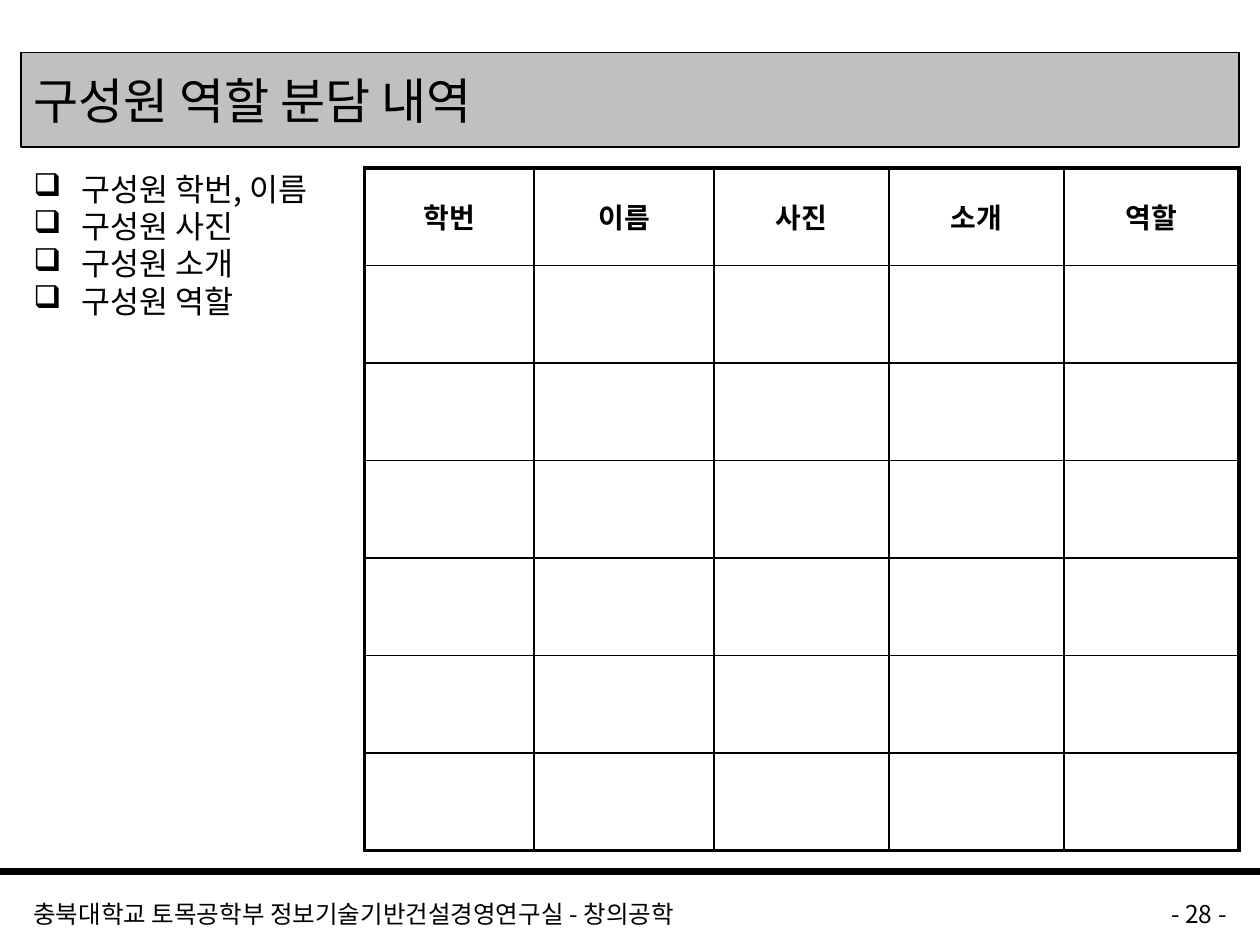
from lxml import etree
from pptx import Presentation
from pptx import util as u
from pptx.dml.color import RGBColor
from pptx.enum import shapes, text
from pptx.oxml.ns import qn

COLORS = {"ink": "000000", "band": "C0C0C0"}
FONT = "Noto Sans CJK KR"
WIDTH, HEIGHT = u.Inches(10), u.Inches(7.5)
COLUMN, ROW = WIDTH / 60, HEIGHT / 90
HEADINGS = ["학번", "이름", "사진", "소개", "역할"]
TOPICS = ["구성원 학번, 이름", "구성원 사진", "구성원 소개", "구성원 역할"]
COLUMN_WIDTHS = [1.35, 1.43, 1.39, 1.39, 1.39]
MEMBER_ROWS = 6
INNER, OUTER = 1, 2.25


def grid(left, top, columns, rows):
    return [round(v) for v in (left * COLUMN, top * ROW, columns * COLUMN, rows * ROW)]


def color(name):
    return RGBColor.from_string(COLORS[name])


def format_runs(frame, size, bold=False):
    for paragraph in frame.paragraphs:
        for run in paragraph.runs:
            run.font.size = u.Pt(size)
            run.font.bold = bold
            run.font.name = FONT
            run.font.color.rgb = color("ink")
            latin = run.font._element.find(qn("a:latin"))
            latin.addnext(latin.makeelement(qn("a:ea"), {"typeface": FONT}))


def add_text(slide, box, wording, size):
    frame = slide.shapes.add_textbox(*box).text_frame
    frame.word_wrap = True
    frame.text = wording
    format_runs(frame, size)
    return frame


def place_title(slide, box):
    title = slide.shapes.title
    title.left, title.top, title.width, title.height = box
    title.fill.solid()
    title.fill.fore_color.rgb = color("band")
    title.line.color.rgb = color("ink")
    title.line.width = u.Pt(0.75)
    frame = title.text_frame
    frame.text = "구성원 역할 분담 내역"
    frame.vertical_anchor = text.MSO_ANCHOR.MIDDLE
    frame.paragraphs[0].alignment = text.PP_ALIGN.LEFT
    format_runs(frame, 28)


def place_topics(slide, box):
    frame = add_text(slide, box, "\n".join(TOPICS), 18)
    indent = u.Inches(0.38)
    for paragraph in frame.paragraphs:
        paragraph.line_spacing = 0.9
        paragraph.space_before = u.Pt(1.8)
        properties = paragraph._p.get_or_add_pPr()
        properties.set("marL", str(indent))
        properties.set("indent", str(-indent))
        etree.SubElement(properties, qn("a:buChar"), char="❑")


def set_borders(cell, widths):
    properties = cell._tc.get_or_add_tcPr()
    for position, (side, width) in enumerate(widths.items()):
        border = etree.Element(qn(f"a:ln{side}"), w=str(u.Pt(width)))
        fill = etree.SubElement(border, qn("a:solidFill"))
        etree.SubElement(fill, qn("a:srgbClr"), val=COLORS["ink"])
        properties.insert(position, border)


def place_members(slide, box):
    last_row, last_column = MEMBER_ROWS, len(HEADINGS) - 1
    members = slide.shapes.add_table(last_row + 1, last_column + 1, *box).table
    members.first_row = members.horz_banding = False
    for column, width in zip(members.columns, COLUMN_WIDTHS):
        column.width = round(box[2] * width / sum(COLUMN_WIDTHS))
    for r in range(last_row + 1):
        for c, heading in enumerate(HEADINGS):
            cell = members.cell(r, c)
            cell.fill.background()
            set_borders(cell, {
                "L": OUTER if c == 0 else INNER,
                "R": OUTER if c == last_column else INNER,
                "T": OUTER if r == 0 else INNER,
                "B": OUTER if r == last_row else INNER,
            })
            if r == 0:
                cell.text_frame.text = heading
                cell.vertical_anchor = text.MSO_ANCHOR.MIDDLE
                cell.text_frame.paragraphs[0].alignment = text.PP_ALIGN.CENTER
                format_runs(cell.text_frame, 16, bold=True)


def place_footer(slide, box):
    left, top, width, height = box
    rule = slide.shapes.add_connector(
        shapes.MSO_CONNECTOR.STRAIGHT, left, top, left + width, top)
    rule.line.color.rgb = color("ink")
    rule.line.width = u.Pt(4.5)
    etree.SubElement(rule._element.spPr, qn("a:effectLst"))
    margin, text_top, text_height = round(COLUMN), top + round(2 * ROW), round(3 * ROW)
    page_width = width // 6
    lab_width = width - 2 * margin - page_width - margin
    add_text(slide, (left + margin, text_top, lab_width, text_height),
             "충북대학교 토목공학부 정보기술기반건설경영연구실 - 창의공학", 14)
    page = add_text(slide, (left + width - margin - page_width, text_top,
                            page_width, text_height), "- 28 -", 14)
    page.paragraphs[0].alignment = text.PP_ALIGN.RIGHT


def main():
    deck = Presentation()
    deck.slide_width, deck.slide_height = WIDTH, HEIGHT
    slide = deck.slides.add_slide(deck.slide_layouts.get_by_name("Title Only"))
    place_footer(slide, grid(0, 83, 60, 7))
    place_title(slide, grid(1, 5, 58, 9))
    place_topics(slide, grid(1, 16, 28.5, 65))
    place_members(slide, grid(17.35, 16, 41.65, 65))
    deck.save("out.pptx")


if __name__ == "__main__":
    main()
